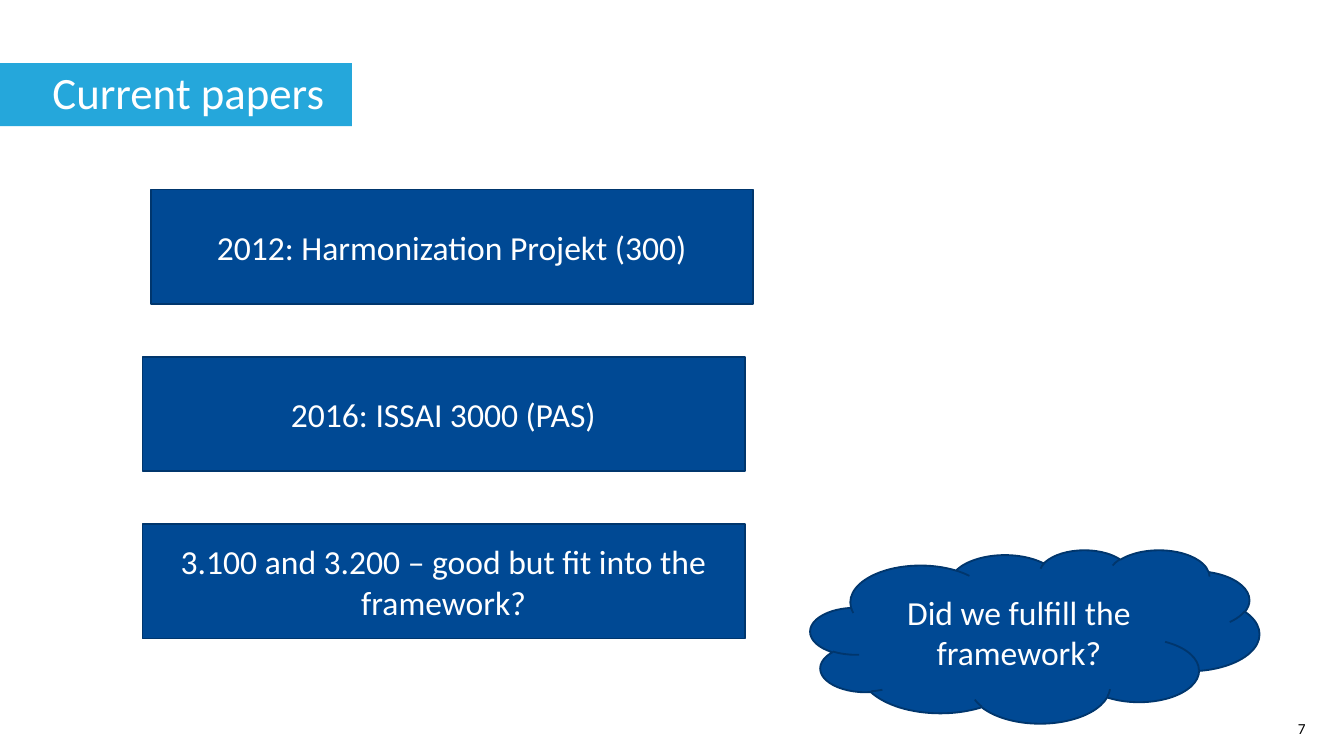
"""Build the slide on current papers, with three milestones and a closing question."""
import dataclasses

import pptx
import pptx.dml.color
import pptx.enum.shapes
import pptx.enum.text
import pptx.slide
import pptx.text.text
import pptx.util

Pt = pptx.util.Pt
RGB = pptx.dml.color.RGBColor
Align = pptx.enum.text.PP_ALIGN
Anchor = pptx.enum.text.MSO_ANCHOR
Preset = pptx.enum.shapes.MSO_SHAPE


@dataclasses.dataclass(frozen=True)
class Theme:
    font: str = "Calibri"
    heading_size: float = 24
    statement_size: float = 18
    number_size: float = 8.2
    white: RGB = RGB(0xFF, 0xFF, 0xFF)
    black: RGB = RGB(0, 0, 0)
    banner: RGB = RGB(0x25, 0xA7, 0xDB)
    fill: RGB = RGB(0x00, 0x49, 0x94)
    outline: RGB = RGB(0x00, 0x36, 0x6D)


@dataclasses.dataclass(frozen=True)
class Box:
    left: float
    top: float
    width: float
    height: float

    def lengths(self) -> tuple[pptx.util.Length, ...]:
        return tuple(Pt(side) for side in dataclasses.astuple(self))


@dataclasses.dataclass(frozen=True)
class Statement:
    text: str
    box: Box
    preset: Preset = Preset.RECTANGLE


THEME = Theme()
FIRST_TOP, PITCH = 101.5, 89.7
MILESTONES = [
    ("2012: Harmonization Projekt (300)", 80.7),
    ("2016: ISSAI 3000 (PAS)", 76.3),
    ("3.100 and 3.200 – good but fit into the framework?", 76.3),
]
STATEMENTS = [
    Statement(text, Box(left, FIRST_TOP + row * PITCH, 322.6, 61.2))
    for row, (text, left) in enumerate(MILESTONES)
] + [Statement("Did we fulfill the framework?", Box(434.2, 294.5, 240.5, 92.9), Preset.CLOUD)]


def write(frame: pptx.text.text.TextFrame, text: str, size: float, color: RGB,
          align: Align) -> None:
    """Fill a text frame with one formatted paragraph."""
    frame.text = text
    paragraph = frame.paragraphs[0]
    paragraph.alignment = align
    paragraph.font.name = THEME.font
    paragraph.font.size = Pt(size)
    paragraph.font.color.rgb = color


def draw_heading(slide: pptx.slide.Slide, text: str, box: Box) -> None:
    """Turn the title placeholder into the banner at the left edge."""
    heading = slide.shapes.title
    heading.left, heading.top, heading.width, heading.height = box.lengths()
    heading.fill.solid()
    heading.fill.fore_color.rgb = THEME.banner
    frame = heading.text_frame
    frame.word_wrap = False
    frame.auto_size = pptx.enum.text.MSO_AUTO_SIZE.NONE
    frame.vertical_anchor = Anchor.MIDDLE
    frame.margin_left, frame.margin_right = Pt(28.1), Pt(14.4)
    write(frame, text, THEME.heading_size, THEME.white, Align.LEFT)
    frame.paragraphs[0].line_spacing = 0.9


def draw_statement(slide: pptx.slide.Slide, statement: Statement) -> None:
    """Draw a filled shape with its centred statement."""
    panel = slide.shapes.add_shape(statement.preset, *statement.box.lengths())
    panel.shadow.inherit = False
    panel.fill.solid()
    panel.fill.fore_color.rgb = THEME.fill
    panel.line.color.rgb = THEME.outline
    panel.line.width = Pt(1)
    panel.text_frame.word_wrap = True
    panel.text_frame.vertical_anchor = Anchor.MIDDLE
    write(panel.text_frame, statement.text, THEME.statement_size, THEME.white, Align.CENTER)


def draw_number(slide: pptx.slide.Slide, number: int, box: Box) -> None:
    """Write the slide number in the lower right corner."""
    frame = slide.shapes.add_textbox(*box.lengths()).text_frame
    frame.word_wrap = True
    write(frame, str(number), THEME.number_size, THEME.black, Align.RIGHT)


def main() -> None:
    """Build and save the presentation."""
    deck = pptx.Presentation()
    deck.slide_width, deck.slide_height = Pt(720), Pt(405)
    slide = deck.slides.add_slide(deck.slide_layouts.get_by_name("Title Only"))
    draw_number(slide, 7, Box(643, 381.6, 63.4, 17.3))
    draw_heading(slide, "Current papers", Box(0, 33.8, 188.6, 33.8))
    for statement in STATEMENTS:
        draw_statement(slide, statement)
    deck.save("out.pptx")


if __name__ == "__main__":
    main()
